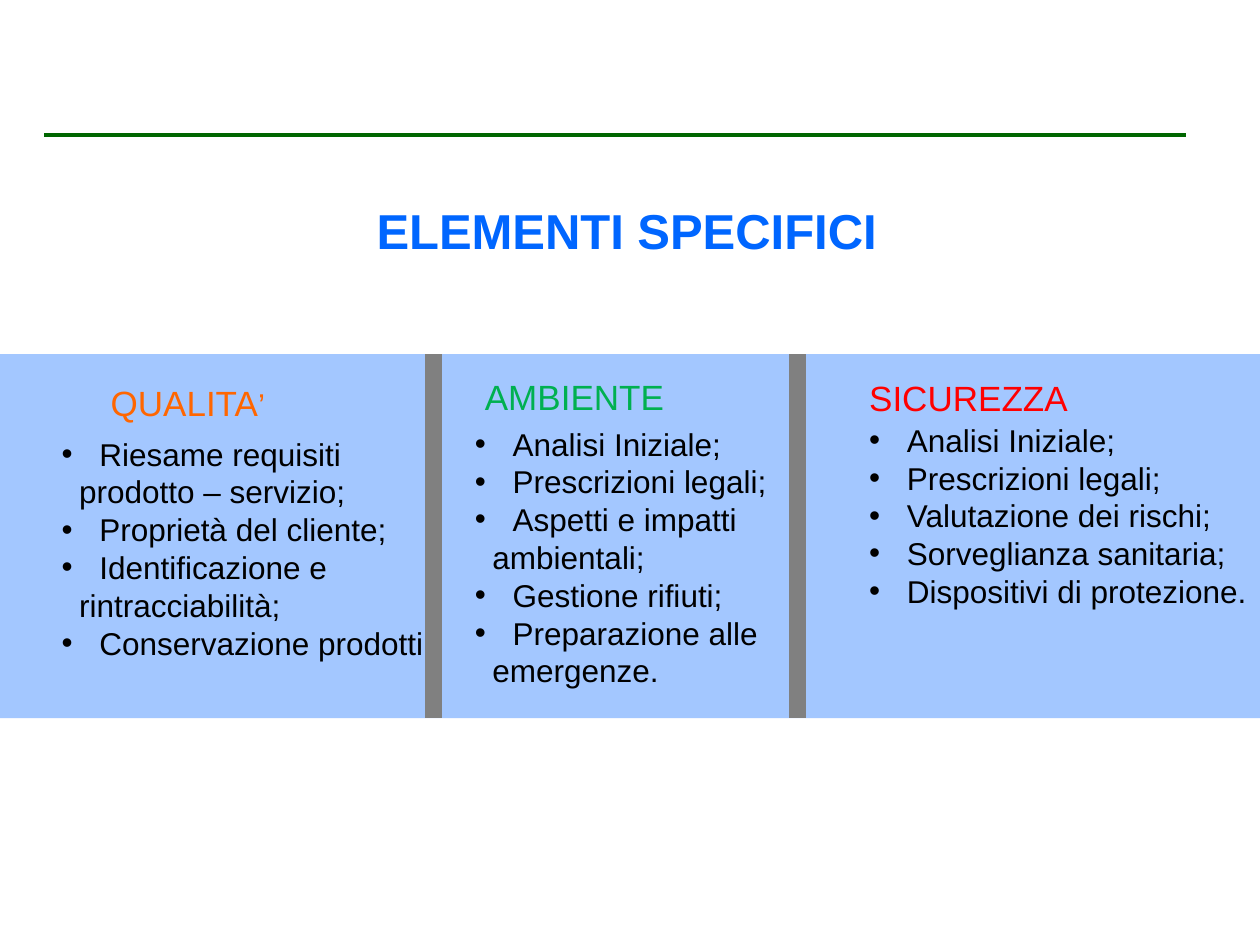
from lxml import etree
from pptx import Presentation, util as u
from pptx.dml.color import RGBColor
from pptx.enum import shapes, text
from pptx.oxml.ns import qn

COLORS = {"rule": "006600", "blue": "0066FF", "orange": "FF6600", "green": "00B050",
          "red": "FF0000", "black": "000000", "divider": "808080"}
TITLE = ("ELEMENTI SPECIFICI", 2.89, 1.54, 4.21, 0.57)
COLUMNS = [
    {"heading": [("QUALITA", 20), ("’", 18)], "color": "orange",
     "heading_at": (0.78, 2.98, 1.8, 0.44), "list_at": (0.39, 3.4, 3.2, 1.92),
     "items": [("Riesame requisiti", "prodotto – servizio;"), ("Proprietà del cliente;",),
               ("Identificazione e", "rintracciabilità;"), ("Conservazione prodotti.",)]},
    {"heading": [("AMBIENTE", 20)], "color": "green",
     "heading_at": (3.75, 2.93, 2.34, 0.44), "list_at": (3.67, 3.32, 3.2, 2.22),
     "items": [("Analisi Iniziale;",), ("Prescrizioni legali;",),
               ("Aspetti e impatti", "ambientali;"), ("Gestione rifiuti;",),
               ("Preparazione alle", "emergenze.")]},
    {"heading": [("SICUREZZA", 20)], "color": "red",
     "heading_at": (6.8, 2.94, 2.34, 0.44), "list_at": (6.8, 3.29, 3.2, 1.62),
     "items": [("Analisi Iniziale;",), ("Prescrizioni legali;",), ("Valutazione dei rischi;",),
               ("Sorveglianza sanitaria;",), ("Dispositivi di protezione.",)]},
]
BAND_TOP, BAND_HEIGHT = 2.81, 2.89
DIVIDERS = [3.44, 6.33]
BULLET_INDENT, WRAPPED_INDENT = 0.3, 0.14
LINE_FACTOR = 1.2


def color(name):
    return RGBColor.from_string(COLORS[name])


def add_line(page, start, end, name, width):
    line = page.shapes.add_connector(shapes.MSO_CONNECTOR.STRAIGHT,
                                     *map(u.Inches, start + end))
    line.line.color.rgb = color(name)
    line.line.width = u.Pt(width)
    etree.SubElement(line._element.spPr, qn("a:effectLst"))


def add_band(page):
    band = page.shapes.add_shape(shapes.MSO_SHAPE.RECTANGLE, 0, u.Inches(BAND_TOP),
                                 u.Inches(10), u.Inches(BAND_HEIGHT))
    band.shadow.inherit = False
    band.fill.solid()
    band.fill.fore_color.rgb = color("blue")
    band.line.fill.background()
    shade = band._element.spPr.find(".//" + qn("a:srgbClr"))
    etree.SubElement(shade, qn("a:alpha"), val="36000")


def add_box(page, at):
    frame = page.shapes.add_textbox(*map(u.Inches, at)).text_frame
    values = {"word_wrap": True, "margin_right": 0,
              "vertical_anchor": text.MSO_ANCHOR.TOP}
    for key, value in values.items():
        setattr(frame, key, value)
    return frame


def write(para, spans, name, bold=False):
    para.line_spacing = u.Pt(LINE_FACTOR * max(size for _, size in spans))
    for words, size in spans:
        span = para.add_run()
        span.text = words
        values = {"name": "Arial", "size": u.Pt(size), "bold": bold}
        for key, value in values.items():
            setattr(span.font, key, value)
        span.font.color.rgb = color(name)


def set_indent(para, bulleted):
    props = para._p.get_or_add_pPr()
    indent = BULLET_INDENT if bulleted else WRAPPED_INDENT
    props.set("marL", str(u.Inches(indent)))
    props.set("indent", str(-u.Inches(indent) if bulleted else 0))
    if bulleted:
        etree.SubElement(props, qn("a:buFont"), typeface="Arial")
        etree.SubElement(props, qn("a:buChar"), char="•")
    else:
        etree.SubElement(props, qn("a:buNone"))


def add_list(page, at, items):
    frame = add_box(page, at)
    lines = [(line, index == 0) for item in items for index, line in enumerate(item)]
    for index, (line, bulleted) in enumerate(lines):
        para = frame.add_paragraph() if index else frame.paragraphs[0]
        set_indent(para, bulleted)
        write(para, [(line, 18)], "black")


def main():
    deck = Presentation()
    deck.slide_width, deck.slide_height = u.Inches(10), u.Inches(7.5)
    page = deck.slides.add_slide(deck.slide_layouts[6])
    add_line(page, (0.35, 1.07), (9.41, 1.07), "rule", 2)
    add_band(page)
    title, *title_at = TITLE
    write(add_box(page, title_at).paragraphs[0], [(title, 28)], "blue", bold=True)
    for column in COLUMNS:
        heading = add_box(page, column["heading_at"]).paragraphs[0]
        write(heading, column["heading"], column["color"])
        add_list(page, column["list_at"], column["items"])
    for x in DIVIDERS:
        add_line(page, (x, BAND_TOP), (x, BAND_TOP + BAND_HEIGHT), "divider", 10)
    deck.save("out.pptx")


if __name__ == "__main__":
    main()
